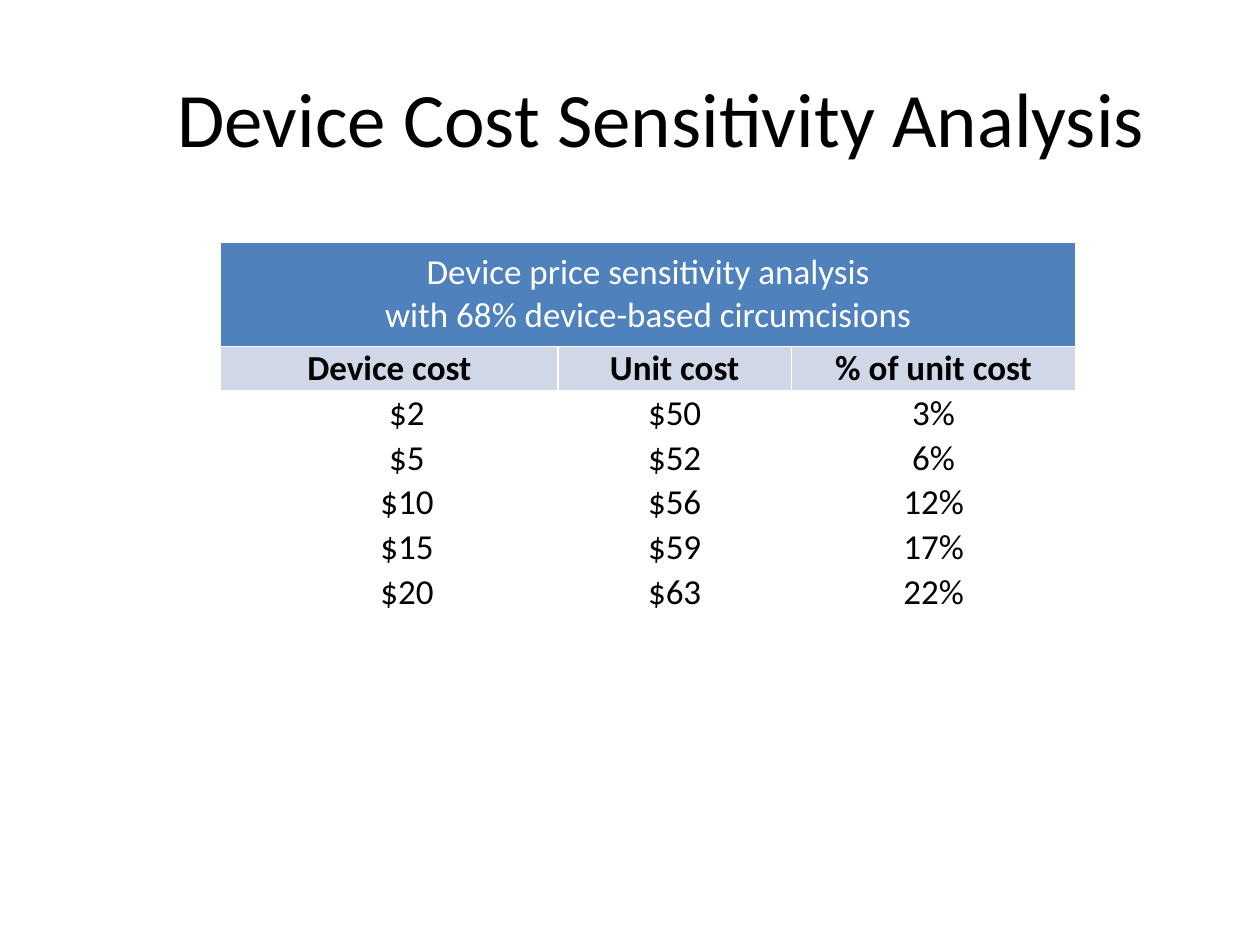
from lxml.etree import SubElement
from pptx import Presentation
from pptx.dml.color import RGBColor
from pptx.enum.text import MSO_ANCHOR as Anchor, PP_ALIGN as Align
from pptx.oxml.ns import qn
from pptx.util import Inches, Pt

# Content
TITLE = "Device Cost Sensitivity Analysis"
CAPTION = "Device price sensitivity analysis\nwith 68% device-based circumcisions"
HEADINGS = ("Device cost", "Unit cost", "% of unit cost")
COSTS = [
    ("$2", "$50", "3%"),
    ("$5", "$52", "6%"),
    ("$10", "$56", "12%"),
    ("$15", "$59", "17%"),
    ("$20", "$63", "22%"),
]

# Style and measures, in inches
COLORS = {"text": "000000", "light": "FFFFFF", "caption": "4F81BD", "heading": "D0D8E8"}
FONT = "Calibri"
LEFT, TOP = 1.75, 1.92
COLUMN_WIDTHS = (2.68, 1.85, 2.26)
CAPTION_HEIGHT, ROW_HEIGHT = 0.83, 0.355
COST_INDENT = 0.28


def rgb(name):
    return RGBColor.from_string(COLORS[name])


def write(frame, text, size, color, bold=False):
    frame.text = text
    for para in frame.paragraphs:
        para.alignment = Align.CENTER
        for span in para.runs:
            font = span.font
            font.name, font.size, font.bold = FONT, Pt(size), bold
            font.color.rgb = rgb(color)


def add_borders(cell):
    properties = cell._tc.get_or_add_tcPr()
    for side in ("lnL", "lnR", "lnT", "lnB"):
        line = SubElement(properties, qn(f"a:{side}"), w=str(Pt(1)))
        fill = SubElement(line, qn("a:solidFill"))
        SubElement(fill, qn("a:srgbClr"), val=COLORS["light"])


def format_cell(cell, fill=None, indent=0):
    cell.vertical_anchor = Anchor.MIDDLE
    cell.margin_left = Inches(indent)
    cell.margin_right = cell.margin_top = cell.margin_bottom = 0
    add_borders(cell)
    if fill:
        cell.fill.solid()
        cell.fill.fore_color.rgb = rgb(fill)
    else:
        cell.fill.background()


deck = Presentation()
deck.slide_width, deck.slide_height = Inches(10), Inches(7.5)
page = deck.slides.add_slide(deck.slide_layouts[5])

# Title
title = page.shapes.title
title.left, title.top = Inches(1), Inches(0.3)
title.width, title.height = Inches(8.5), Inches(1.25)
title.text_frame.vertical_anchor = Anchor.MIDDLE
write(title.text_frame, TITLE, 44, "text")

# Table grid
rows = [(CAPTION, "", ""), HEADINGS, *COSTS]
heights = [CAPTION_HEIGHT] + [ROW_HEIGHT] * (len(rows) - 1)
table = page.shapes.add_table(
    len(rows), len(COLUMN_WIDTHS), Inches(LEFT), Inches(TOP),
    Inches(sum(COLUMN_WIDTHS)), Inches(sum(heights))).table
table.horz_banding = False
for column, width in zip(table.columns, COLUMN_WIDTHS):
    column.width = Inches(width)
for row, height in zip(table.rows, heights):
    row.height = Inches(height)
table.cell(0, 0).merge(table.cell(0, len(COLUMN_WIDTHS) - 1))

# Table cells
fills = {0: "caption", 1: "heading"}
for r, values in enumerate(rows):
    for c, value in enumerate(values):
        cell = table.cell(r, c)
        is_cost = r > 1 and c == 0
        format_cell(cell, fills.get(r), COST_INDENT if is_cost else 0)
        if value:
            write(cell.text_frame, value, 20, "text" if r else "light", bold=r == 1)

deck.save("out.pptx")
